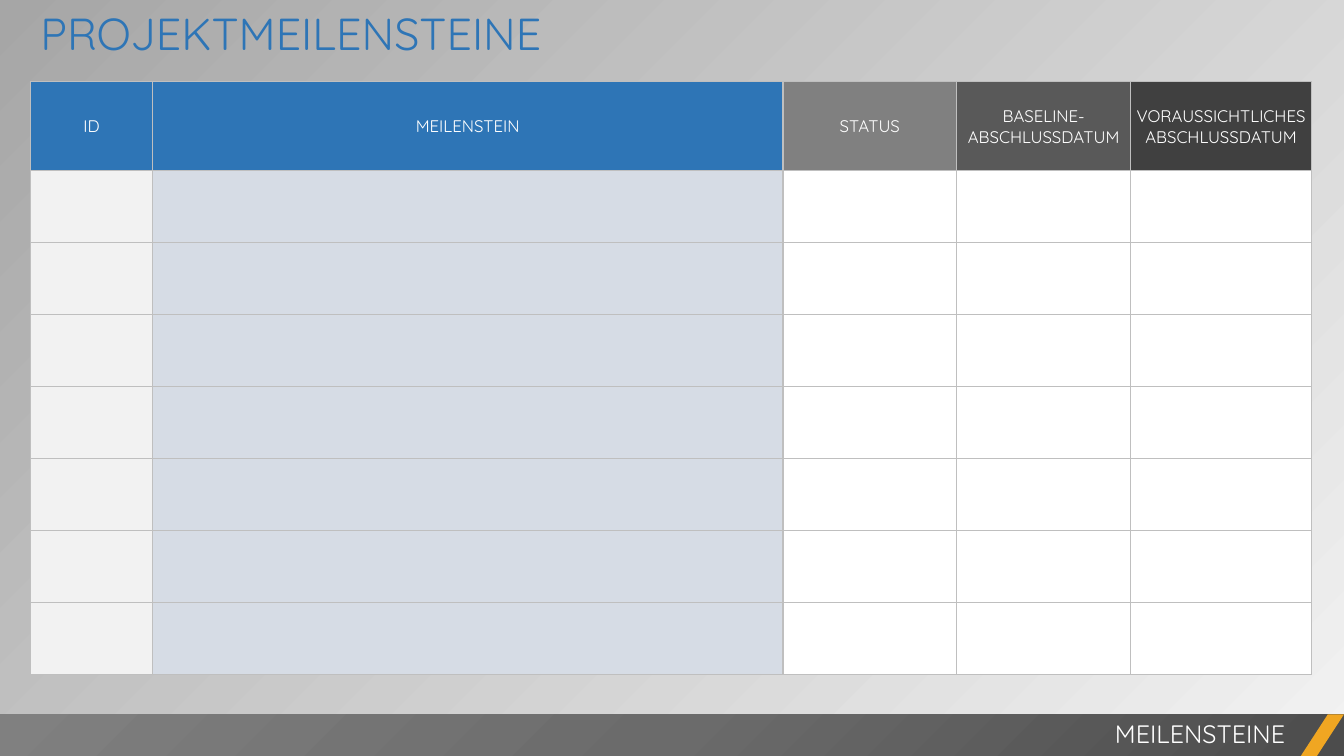
import pptx
import pptx.util
import pptx.dml.color
import pptx.enum.shapes
import pptx.enum.text
import pptx.oxml
import pptx.oxml.ns

Pt = pptx.util.Pt
ALIGN = pptx.enum.text.PP_ALIGN
ANCHOR = pptx.enum.text.MSO_ANCHOR
SHAPES = pptx.enum.shapes.MSO_SHAPE

FONT = "Quicksand"
SLIDE_WIDTH, SLIDE_HEIGHT = 960, 540
FOOTER_TOP, FOOTER_HEIGHT = 510.3, 30
MILESTONE_COUNT = 7
HEADER_HEIGHT, MILESTONE_HEIGHT = 63.3, 51.43

COLORS = {
    "blue": "2E75B6",
    "pale_blue": "D6DCE5",
    "white": "FFFFFF",
    "pale_gray": "F2F2F2",
    "border": "BFBFBF",
    "silver": "A6A6A6",
    "gray": "808080",
    "dark_gray": "595959",
    "charcoal": "404040",
    "footer_dark": "4C4C4C",
    "footer_mid": "6B6B6B",
    "orange": "F0A622",
}

# heading, width, heading fill, body fill
COLUMNS = [
    ("ID", 87.1, "blue", "pale_gray"),
    ("MEILENSTEIN", 450.4, "blue", "pale_blue"),
    ("STATUS", 124, "gray", "white"),
    ("BASELINE-ABSCHLUSSDATUM", 124.5, "dark_gray", "white"),
    ("VORAUSSICHTLICHES ABSCHLUSSDATUM", 129, "charcoal", "white"),
]


def rgb(color):
    return pptx.dml.color.RGBColor.from_string(COLORS[color])


def parse_drawing(xml):
    """Parse one DrawingML element written with the a: prefix."""
    head, tail = xml.split(" ", 1)
    return pptx.oxml.parse_xml(f"{head} {pptx.oxml.ns.nsdecls('a')} {tail}")


def write_text(frame, text, size, color="white", align=ALIGN.LEFT, anchor=ANCHOR.TOP):
    frame.word_wrap = True
    paragraph = frame.paragraphs[0]
    paragraph.alignment = align
    run = paragraph.add_run()
    run.text = text
    run.font.name = FONT
    run.font.size = Pt(size)
    run.font.color.rgb = rgb(color)
    frame.vertical_anchor = anchor
    frame.auto_size = pptx.enum.text.MSO_AUTO_SIZE.SHAPE_TO_FIT_TEXT


def set_background(slide):
    fill = slide.background.fill
    fill.gradient()
    fill.gradient_angle = 135
    for stop, color in zip(fill.gradient_stops, ("pale_gray", "silver")):
        stop.color.rgb = rgb(color)


def add_title(slide, text):
    title = slide.shapes.title
    title.left, title.top = Pt(21.6), Pt(0.7)
    title.width, title.height = Pt(921), Pt(46)
    write_text(title.text_frame, text, size=32, color="blue")


def format_cell(cell, fill):
    cell.fill.solid()
    cell.fill.fore_color.rgb = rgb(fill)
    properties = cell._tc.get_or_add_tcPr()
    for position, side in enumerate(("lnL", "lnR", "lnT", "lnB")):
        border = parse_drawing(
            f'<a:{side} w="12700"><a:solidFill><a:srgbClr val="{COLORS["border"]}"/>'
            f"</a:solidFill></a:{side}>"
        )
        properties.insert(position, border)


def write_heading(cell, text):
    cell.margin_left = cell.margin_right = cell.margin_top = Pt(0.72)
    cell.margin_bottom = 0
    cell.vertical_anchor = ANCHOR.MIDDLE
    paragraph = cell.text_frame.paragraphs[0]
    paragraph.alignment = ALIGN.CENTER
    run = paragraph.add_run()
    run.text = text
    run.font.name = FONT
    run.font.size = Pt(12)
    run.font.color.rgb = rgb("white")


def add_milestone_table(slide):
    width = sum(column[1] for column in COLUMNS)
    height = HEADER_HEIGHT + MILESTONE_COUNT * MILESTONE_HEIGHT
    milestones = slide.shapes.add_table(
        MILESTONE_COUNT + 1, len(COLUMNS), Pt(21.8), Pt(58.4), Pt(width), Pt(height)
    ).table
    milestones.first_row = milestones.horz_banding = False
    for row_index, row in enumerate(milestones.rows):
        row.height = Pt(MILESTONE_HEIGHT if row_index else HEADER_HEIGHT)
    for index, (heading, column_width, heading_fill, body_fill) in enumerate(COLUMNS):
        milestones.columns[index].width = Pt(column_width)
        write_heading(milestones.cell(0, index), heading)
        for row_index in range(MILESTONE_COUNT + 1):
            format_cell(
                milestones.cell(row_index, index),
                body_fill if row_index else heading_fill,
            )


def add_block(slide, kind, left, width, fill):
    """Add a borderless shape that spans the height of the footer."""
    block = slide.shapes.add_shape(
        kind, Pt(left), Pt(FOOTER_TOP), Pt(width), Pt(FOOTER_HEIGHT)
    )
    block.shadow.inherit = False
    block.line.fill.background()
    block.fill.solid()
    block.fill.fore_color.rgb = rgb(fill)
    return block


def apply_radial_gradient(shape, stops):
    """Fill a shape with a gradient that spreads from its bottom right corner."""
    stop_xml = "".join(
        f'<a:gs pos="{percent * 1000}"><a:srgbClr val="{COLORS[color]}"/></a:gs>'
        for percent, color in stops
    )
    gradient = parse_drawing(
        f'<a:gradFill rotWithShape="1"><a:gsLst>{stop_xml}</a:gsLst>'
        '<a:path path="circle"><a:fillToRect l="100000" t="100000"/></a:path></a:gradFill>'
    )
    properties = shape._element.spPr
    solid = properties.find(pptx.oxml.ns.qn("a:solidFill"))
    properties.replace(solid, gradient)


def add_footer(slide, text):
    bar = add_block(slide, SHAPES.RECTANGLE, 0, SLIDE_WIDTH, "footer_mid")
    apply_radial_gradient(
        bar, [(0, "footer_dark"), (50, "footer_mid"), (100, "gray")]
    )
    accent = add_block(slide, SHAPES.PARALLELOGRAM, 929, 31, "orange")
    accent.adjustments[0] = 0.65
    label = slide.shapes.add_textbox(Pt(378), Pt(509.8), Pt(547), Pt(29))
    write_text(label.text_frame, text, size=18, align=ALIGN.RIGHT)


def main():
    presentation = pptx.Presentation()
    presentation.slide_width = Pt(SLIDE_WIDTH)
    presentation.slide_height = Pt(SLIDE_HEIGHT)
    slide = presentation.slides.add_slide(presentation.slide_layouts[5])
    set_background(slide)
    add_title(slide, "PROJEKTMEILENSTEINE")
    add_milestone_table(slide)
    add_footer(slide, "MEILENSTEINE")
    presentation.save("out.pptx")


if __name__ == "__main__":
    main()
